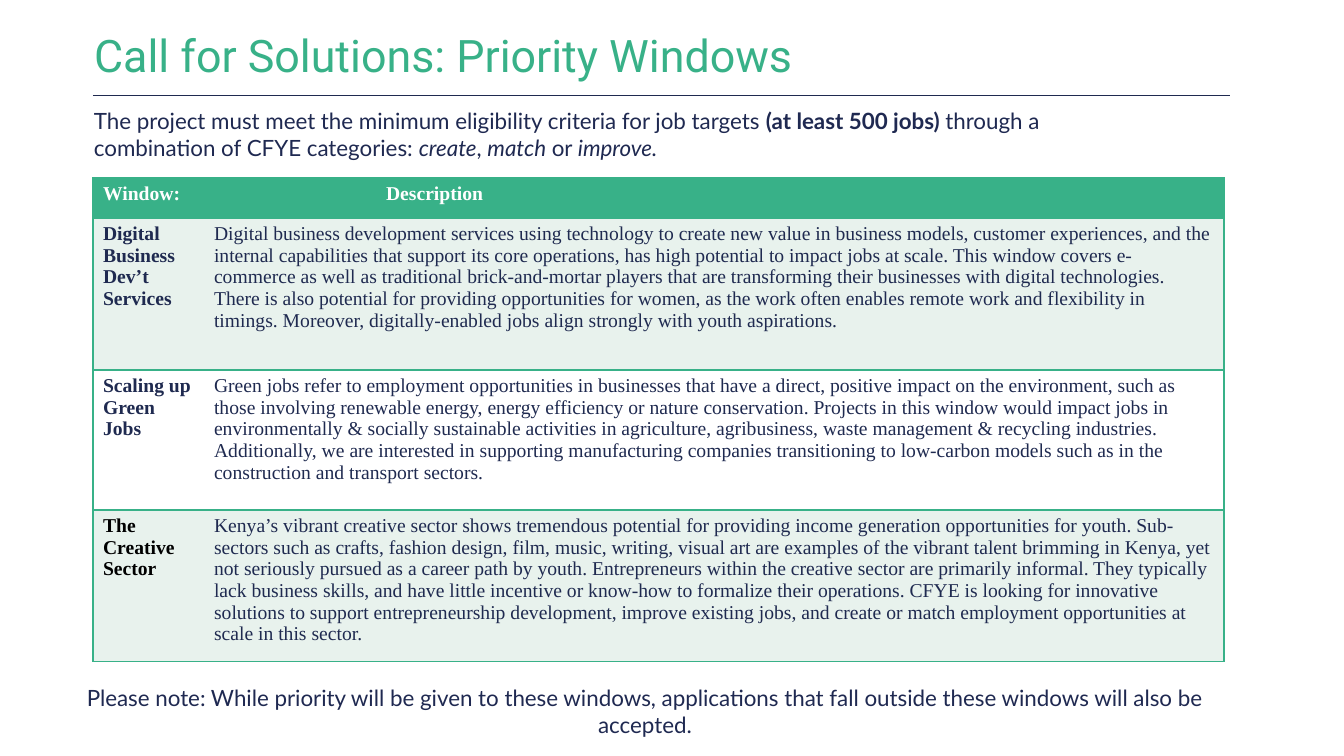
from lxml.etree import SubElement
from pptx import Presentation
from pptx.dml.color import RGBColor
from pptx.enum.shapes import MSO_CONNECTOR
from pptx.enum.text import MSO_ANCHOR, MSO_AUTO_SIZE, PP_ALIGN
from pptx.oxml.ns import qn
from pptx.util import Pt

PX = 914400 / 100.8
GREEN = RGBColor(0x38, 0xB1, 0x88)
PALE = RGBColor(0xE8, 0xF2, 0xED)
WHITE = RGBColor(0xFF, 0xFF, 0xFF)
BLACK = RGBColor(0, 0, 0)
NAVY = RGBColor(0x1F, 0x29, 0x51)
INK = RGBColor(0x1F, 0x2A, 0x50)


def px(*nums):
    return [round(num * PX) for num in nums]


def style(para, face, size, color, bold=False):
    font = para.font
    font.name, font.size, font.bold = face, Pt(size), bold
    font.color.rgb = color


deck = Presentation()
deck.slide_width, deck.slide_height = px(1344, 756)
slide = deck.slides.add_slide(deck.slide_layouts[5])
shapes = slide.shapes

title = shapes.title
title.left, title.top, title.width, title.height = px(84, 21, 1159, 74)
frame = title.text_frame
frame.text = "Call for Solutions: Priority Windows"
frame.auto_size = MSO_AUTO_SIZE.NONE
frame.vertical_anchor = MSO_ANCHOR.MIDDLE
para = frame.paragraphs[0]
para.alignment = PP_ALIGN.LEFT
para.line_spacing = 0.9
style(para, "Roboto", 32, GREEN)

intro = [
    ("The project must meet the minimum eligibility criteria for job targets ", ""),
    ("(at least 500 jobs) ", "b"),
    ("through a combination of CFYE categories: ", ""),
    ("create", "i"),
    (", ", ""),
    ("match", "i"),
    (" or ", ""),
    ("improve.", "i"),
]
note = [(
    "Please note: While priority will be given to these windows, "
    "applications that fall outside these windows will also be accepted.", ""
)]
texts = [
    ((84, 102, 1034, 92), PP_ALIGN.LEFT, intro),
    ((47, 679, 1196, 65), PP_ALIGN.CENTER, note),
]
for place, align, parts in texts:
    frame = shapes.add_textbox(*px(*place)).text_frame
    frame.word_wrap = True
    para = frame.paragraphs[0]
    para.alignment = align
    style(para, "Lato", 16, NAVY)
    for words, mark in parts:
        run = para.add_run()
        run.text = words
        if mark == "b":
            run.font.bold = True
        elif mark == "i":
            run.font.italic = True

rule = shapes.add_connector(MSO_CONNECTOR.STRAIGHT, *px(93, 95, 1230, 95))
rule.line.color.rgb = INK
rule.line.width = Pt(0.5)
SubElement(rule.element.spPr, qn("a:effectLst"))

rows = [
    (40, GREEN, WHITE, "Window:\tDescription", ""),
    (152, PALE, INK, "Digital Business Dev’t Services",
     "Digital business development services using technology to create new value in "
     "business models, customer experiences, and the internal capabilities that support "
     "its core operations, has high potential to impact jobs at scale. This window covers "
     "e-commerce as well as traditional brick-and-mortar players that are transforming "
     "their businesses with digital technologies. There is also potential for providing "
     "opportunities for women, as the work often enables remote work and flexibility in "
     "timings. Moreover, digitally-enabled jobs align strongly with youth aspirations."),
    (140, WHITE, INK, "Scaling up Green Jobs",
     "Green jobs refer to employment opportunities in businesses that have a direct, "
     "positive impact on the environment, such as those involving renewable energy, energy "
     "efficiency or nature conservation. Projects in this window would impact jobs in "
     "environmentally & socially sustainable activities in agriculture, agribusiness, "
     "waste management & recycling industries. Additionally, we are interested in "
     "supporting manufacturing companies transitioning to low-carbon models such as in "
     "the construction and transport sectors."),
    (151, PALE, BLACK, "The Creative Sector",
     "Kenya’s vibrant creative sector shows tremendous potential for providing income "
     "generation opportunities for youth. Sub-sectors such as crafts, fashion design, "
     "film, music, writing, visual art are examples of the vibrant talent brimming in "
     "Kenya, yet not seriously pursued as a career path by youth. Entrepreneurs within "
     "the creative sector are primarily informal. They typically lack business skills, "
     "and have little incentive or know-how to formalize their operations. CFYE is "
     "looking for innovative solutions to support entrepreneurship development, improve "
     "existing jobs, and create or match employment opportunities at scale in this sector."),
]
table = shapes.add_table(len(rows), 2, *px(93, 178, 1131, 483)).table
for col, wide in zip(table.columns, px(111, 1020)):
    col.width = wide
table.cell(0, 0).merge(table.cell(0, 1))

for row, (tall, fill, color, name, about) in enumerate(rows):
    table.rows[row].height = px(tall)[0]
    for col, words in enumerate((name, about)):
        cell = table.cell(row, col)
        props = cell._tc.get_or_add_tcPr()
        for side in "LRTB":
            edge = SubElement(props, qn("a:ln" + side), w=str(Pt(1)))
            if (side, col) in (("R", 0), ("L", 1)) and row:
                SubElement(edge, qn("a:noFill"))
            else:
                paint = SubElement(edge, qn("a:solidFill"))
                SubElement(paint, qn("a:srgbClr"), val=str(GREEN))
        cell.fill.solid()
        cell.fill.fore_color.rgb = fill
        if not words:
            continue
        cell.text = words
        para = cell.text_frame.paragraphs[0]
        if row == 0:
            tabs = SubElement(para._p.get_or_add_pPr(), qn("a:tabLst"))
            SubElement(tabs, qn("a:tab"), pos=str(px(283)[0]), algn="l")
        style(para, "Times New Roman", 14, INK if col else color, col == 0)

deck.save("out.pptx")
